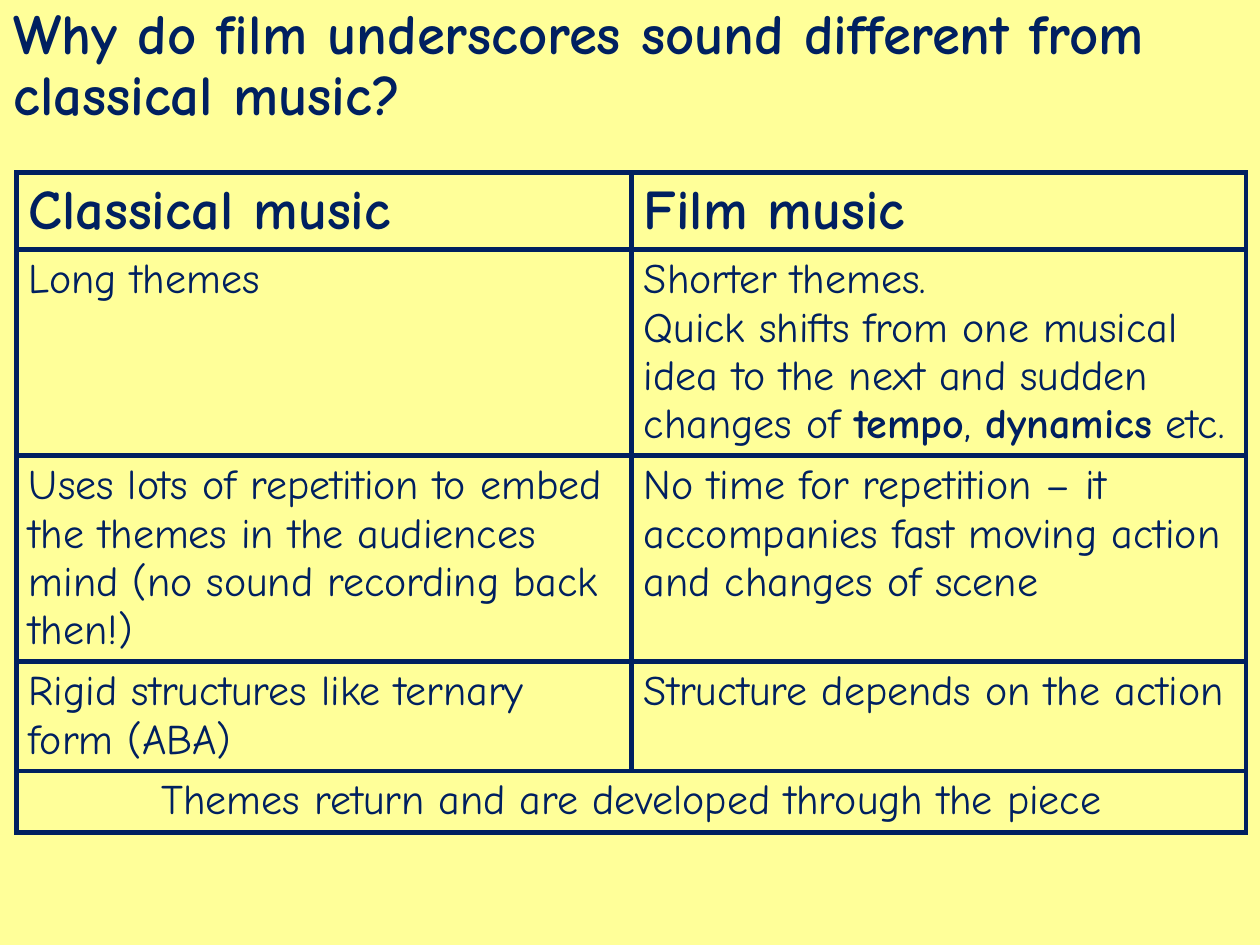
from lxml import etree
from pptx import Presentation
from pptx import util as u
from pptx.dml.color import RGBColor
from pptx.enum import text
from pptx.oxml import ns

NAVY = RGBColor(0x00, 0x20, 0x60)
YELLOW = RGBColor(0xFF, 0xFF, 0x99)
FONT = "Comic Neue"
TITLE = "Why do film underscores sound different from classical music?"
ROW_HEIGHTS = [0.49, 1.57, 1.57, 0.85, 0.49]
ROWS = [
    (["Classical music"], ["Film music"]),
    (
        ["Long themes"],
        [
            "Shorter themes.",
            [
                ("Quick shifts from one musical idea to the next and sudden changes of ", False),
                ("tempo", True),
                (", ", False),
                ("dynamics", True),
                (" etc.", False),
            ],
        ],
    ),
    (
        ["Uses lots of repetition to embed the themes in the audiences mind "
         "(no sound recording back then!)"],
        ["No time for repetition – it accompanies fast moving action and changes of scene"],
    ),
    (["Rigid structures like ternary form (ABA)"], ["Structure depends on the action"]),
    (["Themes return and are developed through the piece"],),
]


class SlideBuilder:
    """Holds the slide style and draws its title and comparison table."""

    def __init__(self, slide):
        self.slide = slide
        self.color = NAVY
        self.font = FONT
        self.border = u.Pt(3)
        background = slide.background.fill
        background.solid()
        background.fore_color.rgb = YELLOW

    def add_text(self, frame, paragraphs, size, bold=False, alignment=text.PP_ALIGN.LEFT):
        for index, content in enumerate(paragraphs):
            paragraph = frame.add_paragraph() if index else frame.paragraphs[0]
            paragraph.alignment = alignment
            runs = [(content, bold)] if isinstance(content, str) else content
            for wording, is_bold in runs:
                run = paragraph.add_run()
                run.text = wording
                run.font.name = self.font
                run.font.size = u.Pt(size)
                run.font.bold = is_bold
                run.font.color.rgb = self.color

    def title(self, wording, left, top, width, height):
        shape = self.slide.shapes.add_textbox(*map(u.Inches, (left, top, width, height)))
        frame = shape.text_frame
        frame.word_wrap = True
        frame.vertical_anchor = text.MSO_ANCHOR.MIDDLE
        self.add_text(frame, [wording], 32.4, bold=True)
        frame.paragraphs[0].line_spacing = 0.9

    def outline(self, cell):
        properties = cell._tc.get_or_add_tcPr()
        for index, side in enumerate(("lnL", "lnR", "lnT", "lnB")):
            line = etree.Element(ns.qn(f"a:{side}"), w=str(self.border))
            fill = etree.SubElement(line, ns.qn("a:solidFill"))
            etree.SubElement(fill, ns.qn("a:srgbClr"), val=str(self.color))
            properties.insert(index, line)

    def table(self, rows, heights, left, top, width):
        columns = len(rows[0])
        shape = self.slide.shapes.add_table(
            len(rows), columns, *map(u.Inches, (left, top, width, sum(heights)))
        )
        table = shape.table
        table.first_row = table.horz_banding = False
        for row, (contents, height) in enumerate(zip(rows, heights)):
            table.rows[row].height = u.Inches(height)
            for column in range(columns):
                cell = table.cell(row, column)
                cell.fill.background()
                self.outline(cell)
            merged = len(contents) < columns
            if merged:
                table.cell(row, 0).merge(table.cell(row, columns - 1))
            alignment = text.PP_ALIGN.CENTER if merged else text.PP_ALIGN.LEFT
            is_header = row == 0
            for column, paragraphs in enumerate(contents):
                frame = table.cell(row, column).text_frame
                self.add_text(frame, paragraphs, 32 if is_header else 24, is_header, alignment)


def main():
    presentation = Presentation()
    presentation.slide_width = u.Inches(10)
    presentation.slide_height = u.Inches(7.5)
    builder = SlideBuilder(presentation.slides.add_slide(presentation.slide_layouts[6]))
    builder.table(ROWS, ROW_HEIGHTS, 0.13, 1.37, 9.76)
    builder.title(TITLE, 0.01, 0.01, 10, 1.04)
    presentation.save("out.pptx")


if __name__ == "__main__":
    main()
